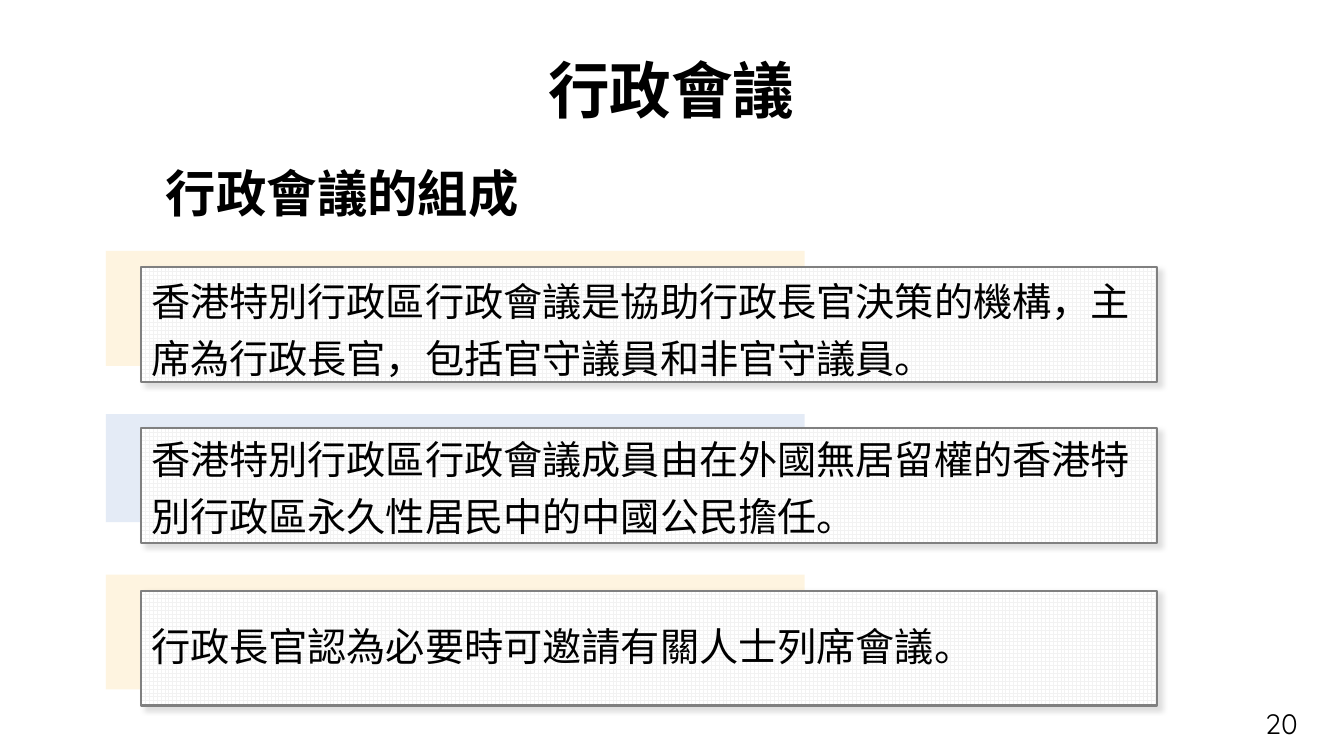
from lxml import etree
from pptx import Presentation
from pptx.dml.color import RGBColor
from pptx.enum.dml import MSO_PATTERN
from pptx.enum.shapes import MSO_SHAPE as SHAPE
from pptx.enum.text import MSO_ANCHOR as ANCHOR, MSO_AUTO_SIZE as AUTO, PP_ALIGN as ALIGN
from pptx.oxml import parse_xml
from pptx.oxml.ns import qn
from pptx.util import Inches, Pt

SHADOW = """<a:outerShdw xmlns:a="http://schemas.openxmlformats.org/drawingml/2006/main"
  blurRad="50800" dist="38100" dir="2700000" algn="tl" rotWithShape="0">
  <a:srgbClr val="000000"><a:alpha val="13000"/></a:srgbClr></a:outerShdw>"""


def rgb(value):
    return RGBColor.from_string(value)


def write(sp, text, size, font="Roboto", bold=False, align=ALIGN.LEFT,
          spacing=1.0, auto=AUTO.SHAPE_TO_FIT_TEXT, inset=(0.1, 0.05)):
    tf = sp.text_frame
    tf.word_wrap = True
    tf.auto_size = auto
    tf.vertical_anchor = ANCHOR.MIDDLE
    tf.margin_left = tf.margin_right = Inches(inset[0])
    tf.margin_top = tf.margin_bottom = Inches(inset[1])
    p = tf.paragraphs[0]
    p.text = text
    p.alignment = align
    p.line_spacing = spacing
    p.space_before = Pt(0)
    p.font.name = font
    p.font.size = Pt(size)
    p.font.bold = bold
    p.font.color.rgb = rgb("000000")


prs = Presentation()
prs.slide_width, prs.slide_height = Inches(13.33), Inches(7.5)
s = prs.slides.add_slide(prs.slide_layouts[5])

# Title and subtitle
title = s.shapes.title
title.left, title.top = Inches(4.44), Inches(0.52)
title.width, title.height = Inches(4.44), Inches(0.81)
subtitle = s.shapes.add_textbox(Inches(1.16), Inches(1.61), Inches(4.47), Inches(0.68))
for sp, text, size in ((title, "行政會議", 44), (subtitle, "行政會議的組成", 36)):
    write(sp, text, size, bold=True, align=ALIGN.CENTER, spacing=0.9, inset=(0.27, 0.03))

# Cards: band top, height and colour; card top; text top, width and height; text
cards = [
    (2.49, 1.14, "FDB42A", 2.65, 2.63, 9.99, 1.18,
     "香港特別行政區行政會議是協助行政長官決策的機構，主席為行政長官，包括官守議員和非官守議員。"),
    (4.11, 1.07, "4472C4", 4.25, 4.2, 10.08, 1.18,
     "香港特別行政區行政會議成員由在外國無居留權的香港特別行政區永久性居民中的中國公民擔任。"),
    (5.7, 1.14, "FDB42A", 5.86, 6.03, 10.08, 0.67,
     "行政長官認為必要時可邀請有關人士列席會議。"),
]
for band_top, band_h, color, card_top, text_top, text_w, text_h, text in cards:
    # Pale band behind the card
    band = s.shapes.add_shape(SHAPE.ROUNDED_RECTANGLE, Inches(1.05), Inches(band_top),
                              Inches(6.93), Inches(band_h))
    band.adjustments[0] = 0
    band.shadow.inherit = False
    band.fill.solid()
    band.fill.fore_color.rgb = rgb(color)
    srgb = band.fill._xPr.find(qn("a:solidFill")).find(qn("a:srgbClr"))
    etree.SubElement(srgb, qn("a:alpha")).set("val", "14000")
    band.line.fill.background()

    # Grid-patterned card with a soft shadow
    card = s.shapes.add_shape(SHAPE.RECTANGLE, Inches(1.4), Inches(card_top),
                              Inches(10.08), Inches(1.14))
    card.fill.patterned()
    card.fill.pattern = MSO_PATTERN.LARGE_GRID
    card.fill.fore_color.rgb = rgb("F2F2F2")
    card.fill.back_color.rgb = rgb("FFFFFF")
    card.line.color.rgb = rgb("808080")
    card.line.width = Pt(1.5)
    card.shadow.inherit = False
    card._element.spPr.find(qn("a:effectLst")).append(parse_xml(SHADOW))

    # Statement
    box = s.shapes.add_textbox(Inches(1.4), Inches(text_top), Inches(text_w), Inches(text_h))
    write(box, text, 28, spacing=1.2)

# Page number
number = s.shapes.add_textbox(Inches(9.97), Inches(6.98), Inches(3), Inches(0.4))
write(number, "20", 20, font="Quicksand", align=ALIGN.RIGHT, auto=AUTO.NONE)

prs.save("out.pptx")
